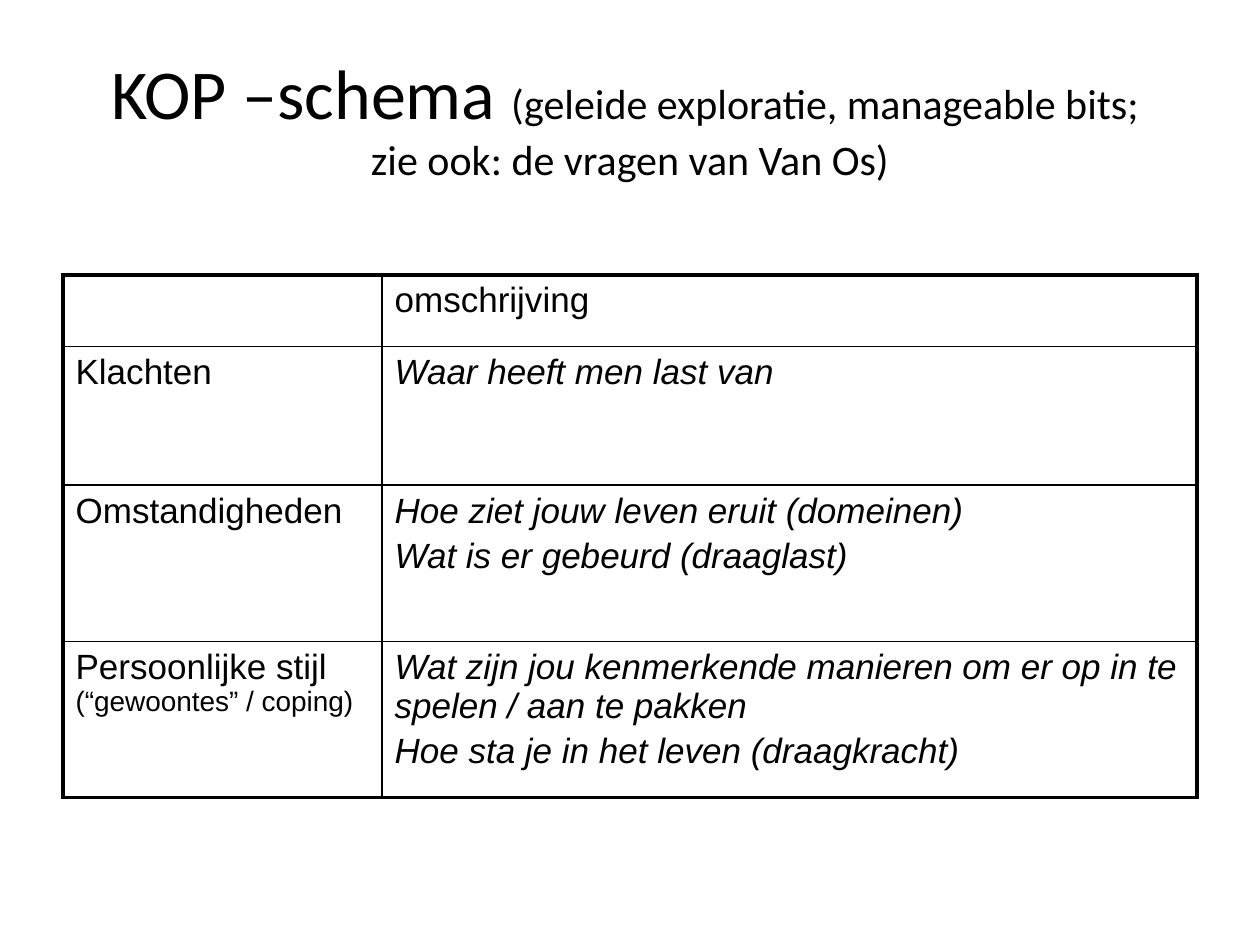
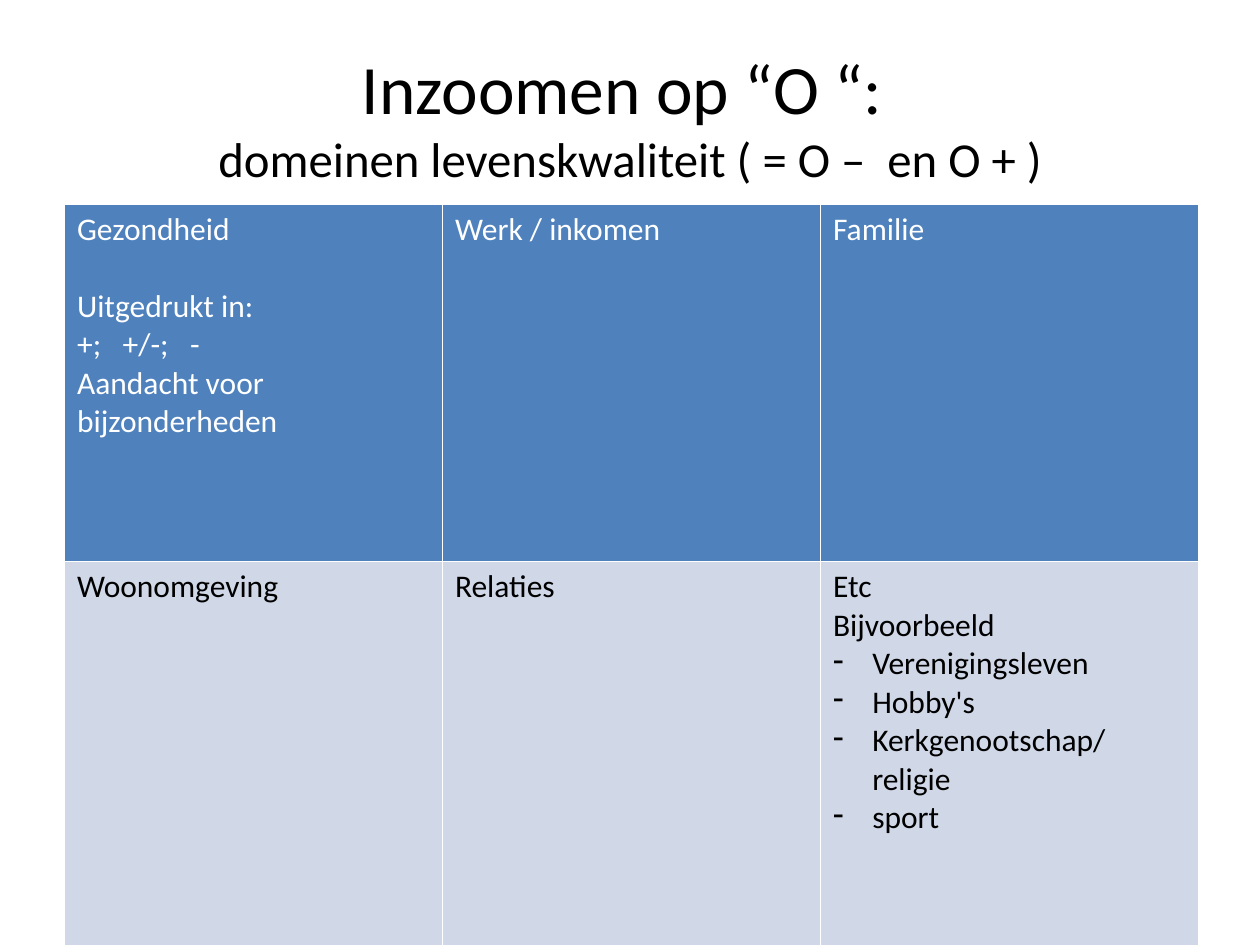
from lxml.etree import SubElement
from pptx import Presentation
from pptx.dml.color import RGBColor
from pptx.enum.text import MSO_ANCHOR, PP_ALIGN
from pptx.oxml.ns import qn
from pptx.util import Cm, Pt

HUES = {"ink": "000000", "paper": "FFFFFF", "head": "4F81BD", "pale": "D0D8E8"}
BOX = {"left": Cm(1.27), "top": Cm(0.76), "width": Cm(22.86), "height": Cm(3.18)}
PLAIN = {"first_row": False, "horz_banding": False}


def write(para, text, face, size, hue="ink", italic=False):
    run = para.add_run()
    run.text = text
    look = {"name": face, "size": Pt(size), "italic": italic, "bold": False}
    for key, value in look.items():
        setattr(run.font, key, value)
    run.font.color.rgb = RGBColor.from_string(HUES[hue])


def edge(cell, side, width, hue):
    line = SubElement(cell._tc.get_or_add_tcPr(), qn("a:ln" + side), w=str(Pt(width)))
    fill = SubElement(line, qn("a:solidFill"))
    SubElement(fill, qn("a:srgbClr"), val=HUES[hue])


deck = Presentation()
deck.slide_width, deck.slide_height = Cm(25.4), Cm(19.05)

titles = [
    [[("KOP –schema ", 40), ("(geleide exploratie, manageable bits; ", 24)],
     [("zie ook: de vragen van Van Os)", 24)]],
    [[("Inzoomen op “O “: ", 39.6)],
     [("domeinen levenskwaliteit ( = O –  en O + )", 27.9)]],
]
grids = [
    {"left": 1.27, "top": 5.54, "cols": [6.43, 16.43], "rows": [1.45, 2.79, 3.15, 3.15]},
    {"left": 1.3, "top": 4.11, "cols": [7.62] * 3, "rows": [7.21, 8.1]},
]
tables = []
for lines, grid in zip(titles, grids):
    slide = deck.slides.add_slide(deck.slide_layouts[5])
    title = slide.shapes.title
    for key, value in BOX.items():
        setattr(title, key, value)
    title.text_frame.vertical_anchor = MSO_ANCHOR.MIDDLE
    para = title.text_frame.paragraphs[0]
    para.alignment = PP_ALIGN.CENTER
    for index, line in enumerate(lines):
        if index:
            para.add_line_break()
        for text, size in line:
            write(para, text, "Calibri", size)

    cols, rows = grid["cols"], grid["rows"]
    table = slide.shapes.add_table(
        len(rows), len(cols), Cm(grid["left"]), Cm(grid["top"]),
        Cm(sum(cols)), Cm(sum(rows))).table
    for key, value in PLAIN.items():
        setattr(table, key, value)
    for col, width in zip(table.columns, cols):
        col.width = Cm(width)
    for row, height in zip(table.rows, rows):
        row.height = Cm(height)
    tables.append(table)

scheme, domains = tables

topics = [
    ([], ["omschrijving"]),
    (["Klachten"], ["Waar heeft men last van"]),
    (["Omstandigheden"],
     ["Hoe ziet jouw leven eruit (domeinen)", "Wat is er gebeurd (draaglast)"]),
    (["Persoonlijke stijl "],
     ["Wat zijn jou kenmerkende manieren om er op in te spelen / aan te pakken",
      "Hoe sta je in het leven (draagkracht)"]),
]
for r, topic in enumerate(topics):
    for c, texts in enumerate(topic):
        cell = scheme.cell(r, c)
        outer = {"L": c == 0, "R": c == 1, "T": r == 0, "B": r == len(topics) - 1}
        for side, thick in outer.items():
            edge(cell, side, 2.25 if thick else 1, "ink")
        cell.fill.background()
        for index, text in enumerate(texts):
            para = cell.text_frame.add_paragraph() if index else cell.text_frame.paragraphs[0]
            if index:
                para.space_before = Pt(3.4)
            write(para, text, "Arial", 20, italic=r > 0 and c == 1)
write(scheme.cell(3, 0).text_frame.paragraphs[0], "(“gewoontes” / coping)", "Arial", 16)

areas = [
    [["Gezondheid", "Uitgedrukt in:", "+;\t+/-;\t-", "Aandacht voor bijzonderheden"],
     ["Werk / inkomen"], ["Familie"]],
    [["Woonomgeving"], ["Relaties"],
     ["Etc", "Bijvoorbeeld", "- Verenigingsleven", "- Hobby's",
      "- Kerkgenootschap/ religie", "- sport"]],
]
tones = [("head", "paper"), ("pale", "ink")]
for r, (area, (back, hue)) in enumerate(zip(areas, tones)):
    for c, texts in enumerate(area):
        cell = domains.cell(r, c)
        for side in "LRTB":
            edge(cell, side, 1, "paper")
        cell.fill.solid()
        cell.fill.fore_color.rgb = RGBColor.from_string(HUES[back])
        for index, text in enumerate(texts):
            para = cell.text_frame.add_paragraph() if index else cell.text_frame.paragraphs[0]
            props = para._p.get_or_add_pPr()
            if text.startswith("- "):
                text = text[2:]
                props.set("marL", str(Cm(0.79)))
                props.set("indent", str(-Cm(0.79)))
                SubElement(props, qn("a:buChar"), char="-")
            if "\t" in text:
                stops = SubElement(props, qn("a:tabLst"))
                for stop in (0.92, 2.28):
                    SubElement(stops, qn("a:tab"), pos=str(Cm(stop)), algn="l")
            write(para, text, "Calibri", 18, hue)
domains.cell(0, 0).text_frame.paragraphs[1].space_before = Pt(22)

deck.save("out.pptx")
